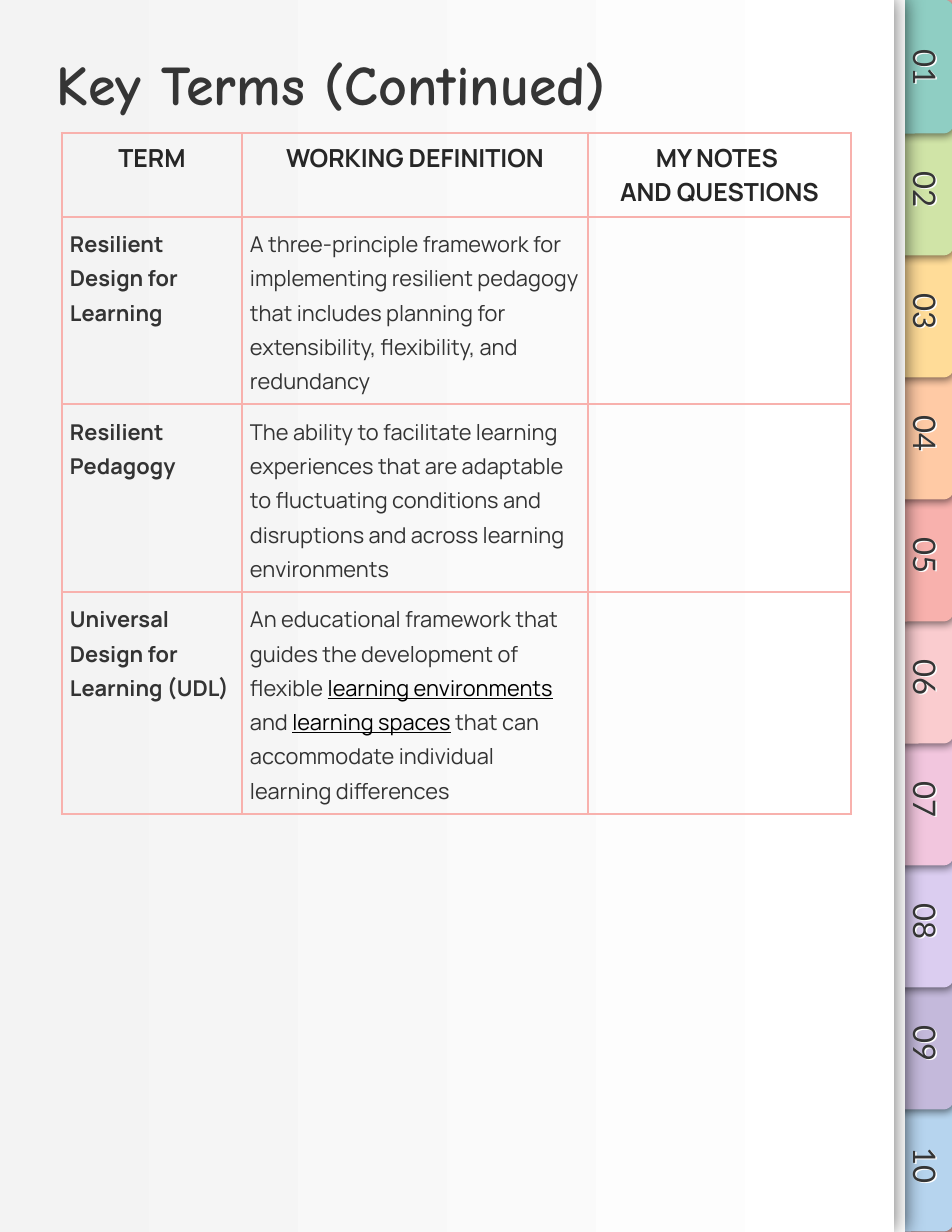
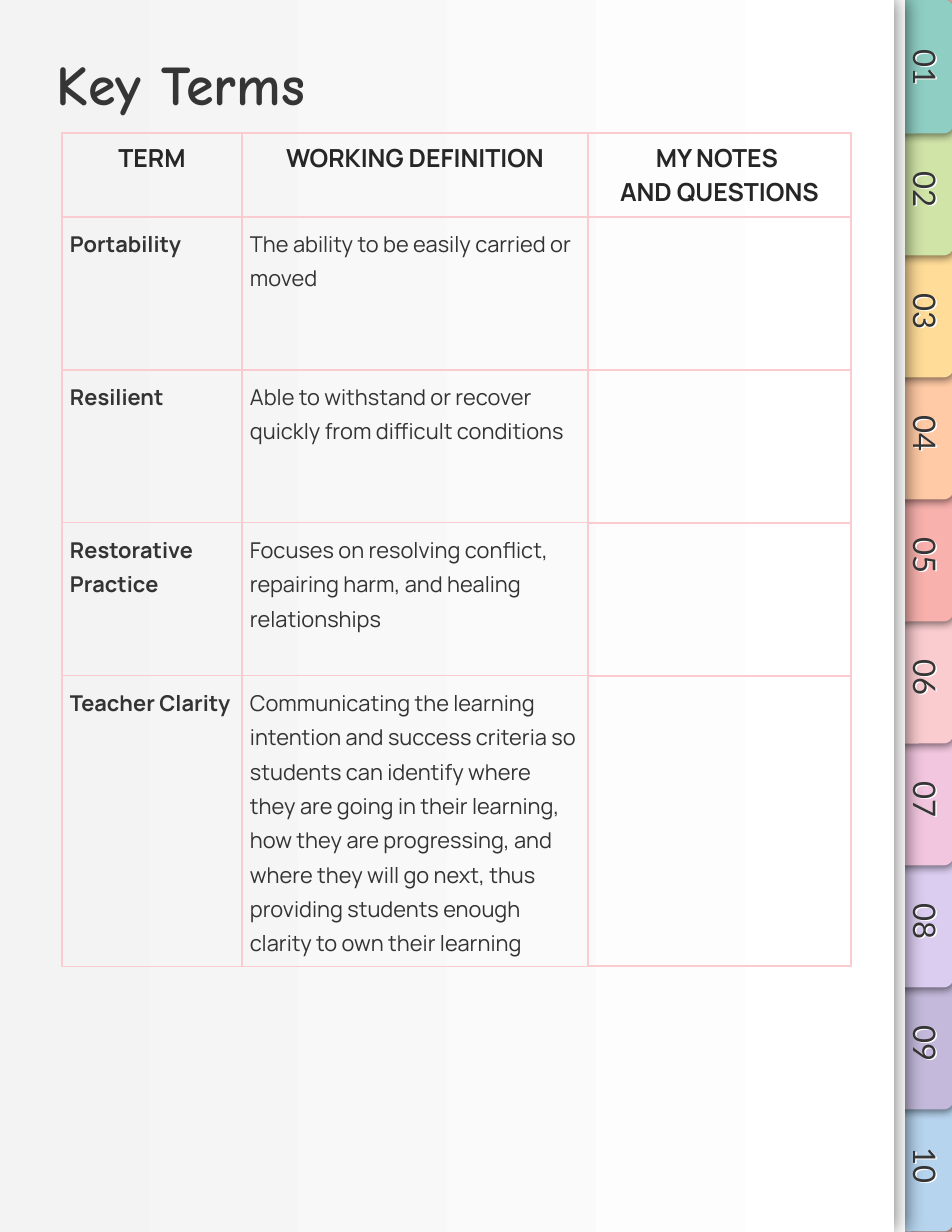
from lxml import etree
from pptx import Presentation
from pptx.dml.color import RGBColor
from pptx.enum.shapes import MSO_SHAPE
from pptx.enum.text import MSO_ANCHOR, MSO_AUTO_SIZE, PP_ALIGN
from pptx.oxml.ns import qn
from pptx.util import Emu, Pt

RECTANGLE = MSO_SHAPE.RECTANGLE
TAB_SHAPE = MSO_SHAPE.ROUND_2_SAME_RECTANGLE
TOP, BOTTOM = MSO_ANCHOR.TOP, MSO_ANCHOR.BOTTOM
LEFT, CENTER = PP_ALIGN.LEFT, PP_ALIGN.CENTER
NO_AUTOFIT = MSO_AUTO_SIZE.NONE

PX_PER_INCH = 112
PAGE_WIDTH, PAGE_HEIGHT = 952, 1232
PAPER_WIDTH = 894
TAB_STEP = 122
TAB_COLORS = ["8FCEC3", "D0E4A7", "FFDC98", "FFCAA5", "F8B1AD",
              "FACCCF", "F2C6DE", "DBCDF0", "C4B9DB", "B6D4EE"]
CORAL, ROSE, WHITE, PAPER_GRAY = "F8B1AD", "FACCCF", "FFFFFF", "F3F3F3"

TITLE_BOX = (46, 39, 797, 71)
TABLE_BOX = (62, 133, 789, 659)
COLUMN_WIDTHS = [180, 346, 263]
HEADER_HEIGHT, ROW_HEIGHT = 47, 153
HEADINGS = ["TERM", "WORKING DEFINITION", "MY NOTES \nAND QUESTIONS"]

TITLE_FONT = dict(name="Comic Neue", size=Pt(36), bold=True, color="353535")
TAB_FONT = dict(name="Lato", size=Pt(20), color="353535")
HEADING_FONT = dict(name="Manrope", size=Pt(16), bold=True, color="262626")
TERM_FONT = dict(name="Manrope", size=Pt(14), bold=True, color="333333")
DEFINITION_FONT = dict(TERM_FONT, bold=False)
LINK_FONT = dict(DEFINITION_FONT, color="000000", underline=True)

# Asterisks mark the underlined words.
CONTINUED_TERMS = [
    ("Resilient Design for Learning",
     "A three-principle framework for implementing resilient pedagogy that "
     "includes planning for extensibility, flexibility, and redundancy"),
    ("Resilient Pedagogy",
     "The ability to facilitate learning experiences that are adaptable to "
     "fluctuating conditions and disruptions and across learning environments"),
    ("Universal Design for Learning (UDL)",
     "An educational framework that guides the development of flexible "
     "*learning environments* and *learning spaces* that can accommodate "
     "individual learning differences"),
]
TERMS = [
    ("Portability", "The ability to be easily carried or moved"),
    ("Resilient",
     "Able to withstand or recover quickly from difficult conditions"),
    ("Restorative Practice",
     "Focuses on resolving conflict, repairing harm, and healing relationships"),
    ("Teacher Clarity",
     "Communicating the learning intention and success criteria so students "
     "can identify where they are going in their learning, how they are "
     "progressing, and where they will go next, thus providing students "
     "enough clarity to own their learning"),
]


def px(length):
    return Emu(round(length * 914400 / PX_PER_INCH))


def box_emu(box):
    return [px(length) for length in box]


def rgb(color):
    return RGBColor.from_string(color)


def set_attributes(target, values):
    for name, value in values.items():
        setattr(target, name, value)


def add_run(paragraph, text, style):
    run = paragraph.add_run()
    run.text = text
    set_attributes(run.font, {k: v for k, v in style.items() if k != "color"})
    run.font.color.rgb = rgb(style["color"])


def add_solid(parent, color):
    solid = etree.SubElement(parent, qn("a:solidFill"))
    return etree.SubElement(solid, qn("a:srgbClr"), val=color)


def add_shadow(shape, color, opacity, blur, distance, angle):
    properties = shape.element.find(qn("p:spPr"))
    for old in properties.findall(qn("a:effectLst")):
        properties.remove(old)
    effects = etree.SubElement(properties, qn("a:effectLst"))
    shadow = etree.SubElement(
        effects, qn("a:outerShdw"), blurRad=str(Pt(blur)),
        dist=str(Pt(distance)), dir=str(angle * 60000),
        algn="bl", rotWithShape="0")
    tint = etree.SubElement(shadow, qn("a:srgbClr"), val=color)
    etree.SubElement(tint, qn("a:alpha"), val=str(opacity * 1000))


def add_plain_shape(slide, preset, box, color):
    shape = slide.shapes.add_shape(preset, *box_emu(box))
    shape.fill.solid()
    shape.fill.fore_color.rgb = rgb(color)
    shape.line.fill.background()
    return shape


def draw_tab(slide, index):
    tab = add_plain_shape(slide, TAB_SHAPE,
                          (857, 37 + index * TAB_STEP, 134, 59),
                          TAB_COLORS[index])
    tab.rotation = 90
    tab.adjustments[0], tab.adjustments[1] = 0.17, 0
    add_shadow(tab, "000000", 50, 5.6, 1.5, 61)


def draw_tab_number(slide, index):
    label = slide.shapes.add_textbox(
        *box_emu((866, 32 + index * TAB_STEP, 131, 71)))
    label.rotation = 90
    frame = label.text_frame
    set_margins(frame, 11)
    set_attributes(frame, dict(word_wrap=True, vertical_anchor=BOTTOM))
    frame.paragraphs[0].alignment = CENTER
    add_run(frame.paragraphs[0], f"{index + 1:02}", TAB_FONT)
    add_shadow(label, WHITE, 100, 0, 1.2, 45)


def draw_paper(slide):
    for left in (11, 0):
        sheet = add_plain_shape(slide, RECTANGLE,
                                (left, 0, PAPER_WIDTH, PAGE_HEIGHT), WHITE)
        if left == 0:
            sheet.fill.gradient()
            sheet.fill.gradient_angle = 0
            for stop, color in zip(sheet.fill.gradient_stops,
                                   (PAPER_GRAY, WHITE)):
                stop.color.rgb = rgb(color)
        add_shadow(sheet, "000000", 50, 12.4, 0.8, 0)


def build_layout(layout, slide):
    """Draw the notebook on a slide, then move its parts to the layout."""
    layout.background.fill.solid()
    layout.background.fill.fore_color.rgb = rgb(CORAL)
    for placeholder in list(layout.placeholders):
        if placeholder.placeholder_format.idx:
            layout.shapes.element.remove(placeholder.element)
    for index in reversed(range(len(TAB_COLORS))):
        draw_tab(slide, index)
    draw_paper(slide)
    for index in range(len(TAB_COLORS)):
        draw_tab_number(slide, index)
    for shape in list(slide.shapes):
        if not shape.is_placeholder:
            layout.shapes.element.append(shape.element)


def set_margins(target, margin):
    set_attributes(target, {f"margin_{side}": px(margin) for side in
                            ("left", "top", "right", "bottom")})


def set_title(slide, text):
    title = slide.shapes.title
    set_attributes(title, dict(zip(("left", "top", "width", "height"),
                                   box_emu(TITLE_BOX))))
    frame = title.text_frame
    set_margins(frame, 11)
    set_attributes(frame, dict(word_wrap=True, vertical_anchor=TOP,
                               auto_size=NO_AUTOFIT))
    frame.paragraphs[0].alignment = LEFT
    add_run(frame.paragraphs[0], text, TITLE_FONT)


def border_width(row, column, side, inner_width):
    """Use the inner width below the headings and left of the notes."""
    before_notes = column - (side == "L") < 2
    return inner_width if before_notes and (row or side == "B") else 1.5


def format_cell(cell, row, column, color, inner_width):
    set_margins(cell, 8)
    cell.vertical_anchor = TOP
    cell.fill.background()
    properties = cell._tc.get_or_add_tcPr()
    for position, side in enumerate("LRTB"):
        width = border_width(row, column, side, inner_width)
        line = etree.Element(qn(f"a:ln{side}"), w=str(Pt(width)))
        add_solid(line, color)
        properties.insert(position, line)


def write_heading(cell, text):
    frame = cell.text_frame
    for number, line in enumerate(text.split("\n")):
        paragraph = frame.add_paragraph() if number else frame.paragraphs[0]
        paragraph.alignment = CENTER
        add_run(paragraph, line, HEADING_FONT)


def write_body(cell, text, style):
    paragraph = cell.text_frame.paragraphs[0]
    paragraph.line_spacing = 1.15
    for number, part in enumerate(text.split("*")):
        add_run(paragraph, part, LINK_FONT if number % 2 else style)


def add_terms_table(slide, box, terms, color, inner_width):
    table = slide.shapes.add_table(len(terms) + 1, len(HEADINGS),
                                   *box_emu(box)).table
    set_attributes(table, dict(first_row=False, horz_banding=False))
    for column, width in zip(table.columns, COLUMN_WIDTHS):
        column.width = px(width)
    for number, row in enumerate(table.rows):
        row.height = px(ROW_HEIGHT if number else HEADER_HEIGHT)
        for column, cell in enumerate(row.cells):
            format_cell(cell, number, column, color, inner_width)
    for column, heading in enumerate(HEADINGS):
        write_heading(table.cell(0, column), heading)
    for number, (term, definition) in enumerate(terms, start=1):
        write_body(table.cell(number, 0), term, TERM_FONT)
        write_body(table.cell(number, 1), definition, DEFINITION_FONT)


def fill_terms_slide(slide, title, terms, color, inner_width):
    set_title(slide, title)
    left, top, width, _ = TABLE_BOX
    height = HEADER_HEIGHT + ROW_HEIGHT * len(terms)
    add_terms_table(slide, (left, top, width, height), terms, color,
                    inner_width)


def main():
    deck = Presentation()
    deck.slide_width, deck.slide_height = px(PAGE_WIDTH), px(PAGE_HEIGHT)
    layout = deck.slide_layouts[5]
    continued, key_terms = [deck.slides.add_slide(layout) for _ in range(2)]
    build_layout(layout, continued)
    fill_terms_slide(continued, "Key Terms (Continued)", CONTINUED_TERMS,
                     CORAL, 1.5)
    fill_terms_slide(key_terms, "Key Terms", TERMS, ROSE, 1)
    deck.save("out.pptx")


if __name__ == "__main__":
    main()
